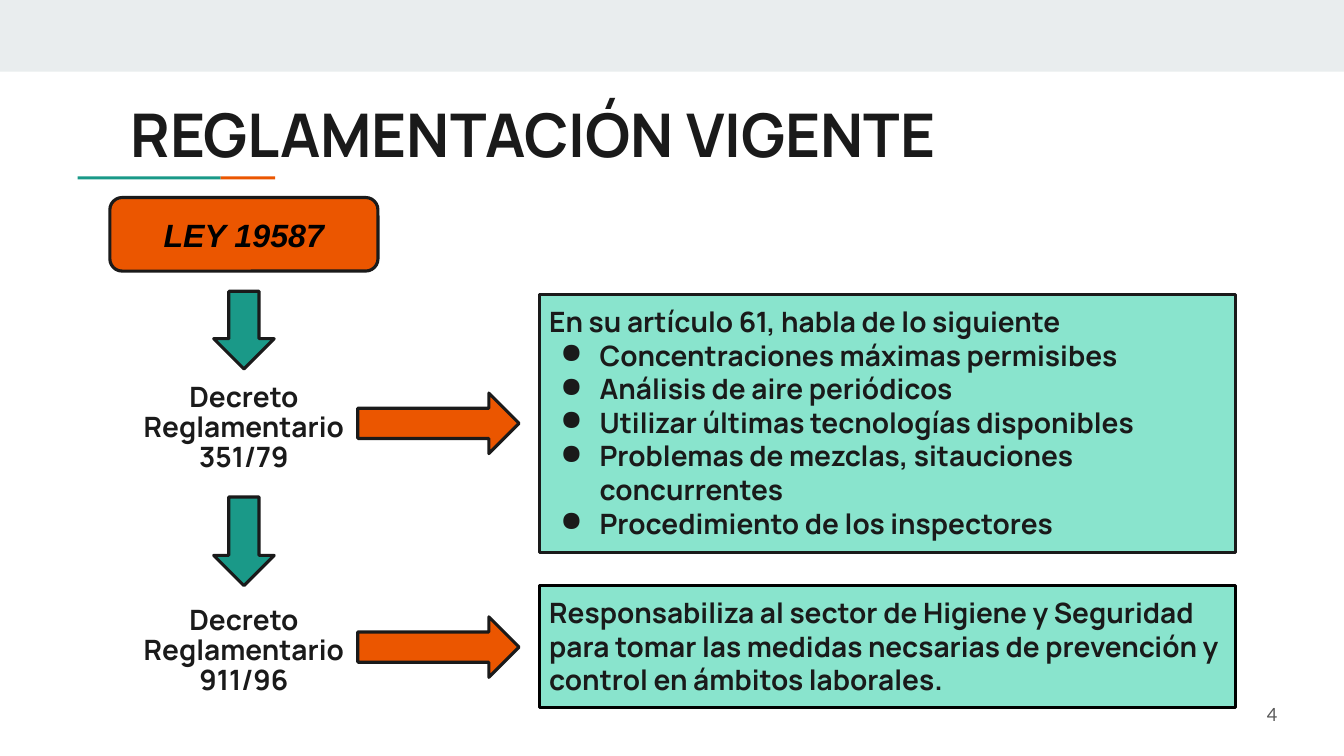
"""Build the slide on current regulations: a law, its decrees and what each one covers."""
from dataclasses import dataclass

import pptx
import pptx.dml.color
import pptx.enum.shapes
import pptx.enum.text
import pptx.oxml
import pptx.oxml.ns
import pptx.util

COLORS = {
    "band": "E9EDEE", "orange": "EB5600", "teal": "1A9988", "mint": "89E4CD",
    "ink": "1A1A1A", "black": "000000", "gray": "595959",
}
SHAPES = pptx.enum.shapes.MSO_SHAPE
ALIGN = pptx.enum.text.PP_ALIGN
ANCHOR = pptx.enum.text.MSO_ANCHOR
GRID_CELL = 0.1
SLIDE_COLUMNS, SLIDE_ROWS = 133.33, 75
ARROW_THICKNESS = 6
DECREE_COLUMN, DECREE_WIDTH, DECREE_HEIGHT = 12.9, 22.6, 10.9
PANEL_COLUMN, PANEL_WIDTH = 53.5, 69.1


@dataclass(frozen=True)
class Area:
    column: float
    row: float
    columns: float
    rows: float

    def lengths(self) -> list[pptx.util.Length]:
        cells = (self.column, self.row, self.columns, self.rows)
        return [pptx.util.Inches(cell * GRID_CELL) for cell in cells]


@dataclass(frozen=True)
class Style:
    size: float = 20
    font: str = "Manrope"
    color: str = "ink"
    bold: bool = True
    italic: bool = False
    align: ALIGN = ALIGN.LEFT
    anchor: ANCHOR = ANCHOR.TOP
    spacing: float = 1.0
    margin: float = 0.05


@dataclass(frozen=True)
class Decree:
    name: str
    row: float
    down_arrow_row: float
    down_arrow_rows: float
    right_arrow_row: float
    panel_row: float
    panel_rows: float
    panel_line: str
    statement: str
    topics: tuple[str, ...] = ()


TITLE_STYLE = Style(size=43, align=ALIGN.CENTER, anchor=ANCHOR.MIDDLE, spacing=0.9)
LAW_STYLE = Style(23, "Arial", "black", italic=True, align=ALIGN.CENTER, anchor=ANCHOR.MIDDLE, margin=0.1)
DECREE_STYLE = Style(align=ALIGN.CENTER, anchor=ANCHOR.BOTTOM, spacing=0.9)
PANEL_STYLE = Style(margin=0.1)
NUMBER_STYLE = Style(13, "Lato", "gray", bold=False, align=ALIGN.RIGHT, anchor=ANCHOR.MIDDLE)

DECREES = (
    Decree(
        "Decreto Reglamentario 351/79", 36.6, 28.9, 7.7, 39, 29.2, 25.6, "ink",
        "En su artículo 61, habla de lo siguiente",
        (
            "Concentraciones máximas permisibes",
            "Análisis de aire periódicos",
            "Utilizar últimas tecnologías disponibles",
            "Problemas de mezclas, sitauciones concurrentes",
            "Procedimiento de los inspectores",
        ),
    ),
    Decree(
        "Decreto Reglamentario 911/96", 58.7, 49.3, 8.8, 61.2, 58.1, 12.1, "black",
        "Responsabiliza al sector de Higiene y Seguridad para tomar las medidas "
        "necsarias de prevención y control en ámbitos laborales.",
    ),
)


def rgb(name: str) -> pptx.dml.color.RGBColor:
    return pptx.dml.color.RGBColor.from_string(COLORS[name])


def add_bullet(paragraph) -> None:
    properties = paragraph._p.get_or_add_pPr()
    properties.set("marL", str(pptx.util.Inches(0.5)))
    properties.set("indent", str(pptx.util.Inches(-0.39)))
    namespace = pptx.oxml.ns.nsdecls("a")
    for element in (
        f'<a:buClr {namespace}><a:srgbClr val="{COLORS["ink"]}"/></a:buClr>',
        f'<a:buChar {namespace} char="●"/>',
    ):
        properties.append(pptx.oxml.parse_xml(element))


def write_text(shape, style: Style, text: str, bullets: tuple[str, ...] = ()) -> None:
    frame = shape.text_frame
    frame.word_wrap = True
    frame.auto_size = pptx.enum.text.MSO_AUTO_SIZE.NONE
    frame.vertical_anchor = style.anchor
    frame.margin_left = frame.margin_right = pptx.util.Inches(0.1)
    frame.margin_top = frame.margin_bottom = pptx.util.Inches(style.margin)
    frame.text = "\n".join((text, *bullets))
    for index, paragraph in enumerate(frame.paragraphs):
        if index:
            add_bullet(paragraph)
        paragraph.alignment = style.align
        paragraph.line_spacing = style.spacing
        paragraph.space_before = pptx.util.Pt(0)
        font = paragraph.font
        font.name, font.size = style.font, pptx.util.Pt(style.size)
        font.bold, font.italic = style.bold, style.italic
        font.color.rgb = rgb(style.color)


def add_box(slide, kind: SHAPES, area: Area, fill: str, line: str | None = "ink"):
    shape = slide.shapes.add_shape(kind, *area.lengths())
    shape.shadow.inherit = False
    shape.fill.solid()
    shape.fill.fore_color.rgb = rgb(fill)
    if line is None:
        shape.line.fill.background()
    else:
        shape.line.color.rgb = rgb(line)
        shape.line.width = pptx.util.Pt(2.25)
    return shape


def add_label(slide, area: Area, style: Style, text: str) -> None:
    write_text(slide.shapes.add_textbox(*area.lengths()), style, text)


def add_decree(slide, decree: Decree) -> None:
    center = DECREE_COLUMN + DECREE_WIDTH / 2
    down_area = Area(center - ARROW_THICKNESS / 2, decree.down_arrow_row, ARROW_THICKNESS, decree.down_arrow_rows)
    add_box(slide, SHAPES.DOWN_ARROW, down_area, "teal")
    name_area = Area(DECREE_COLUMN, decree.row, DECREE_WIDTH, DECREE_HEIGHT)
    add_label(slide, name_area, DECREE_STYLE, decree.name)
    right_area = Area(DECREE_COLUMN + DECREE_WIDTH, decree.right_arrow_row, 16, ARROW_THICKNESS)
    add_box(slide, SHAPES.RIGHT_ARROW, right_area, "orange")
    panel_area = Area(PANEL_COLUMN, decree.panel_row, PANEL_WIDTH, decree.panel_rows)
    panel = add_box(slide, SHAPES.RECTANGLE, panel_area, "mint", decree.panel_line)
    write_text(panel, PANEL_STYLE, decree.statement, decree.topics)


def add_title(slide) -> None:
    title = slide.shapes.title
    title.left, title.top, title.width, title.height = Area(-1.8, 10.8, 109.4, 5.7).lengths()
    write_text(title, TITLE_STYLE, "REGLAMENTACIÓN VIGENTE")


def main() -> None:
    presentation = pptx.Presentation()
    presentation.slide_width = pptx.util.Inches(SLIDE_COLUMNS * GRID_CELL)
    presentation.slide_height = pptx.util.Inches(SLIDE_ROWS * GRID_CELL)
    slide = presentation.slides.add_slide(presentation.slide_layouts[5])

    add_box(slide, SHAPES.RECTANGLE, Area(0, 0, SLIDE_COLUMNS, 7.1), "band", None)
    add_box(slide, SHAPES.RECTANGLE, Area(7.7, 17.5, 14.2, 0.3), "teal", None)
    add_box(slide, SHAPES.RECTANGLE, Area(21.9, 17.5, 5.4, 0.3), "orange", None)
    add_title(slide)

    law = add_box(slide, SHAPES.ROUNDED_RECTANGLE, Area(10.9, 19.6, 26.6, 7.3), "orange")
    write_text(law, LAW_STYLE, "LEY 19587")
    for decree in DECREES:
        add_decree(slide, decree)
    add_label(slide, Area(119.7, 68, 8, 5.7), NUMBER_STYLE, "4")

    presentation.save("out.pptx")


if __name__ == "__main__":
    main()
